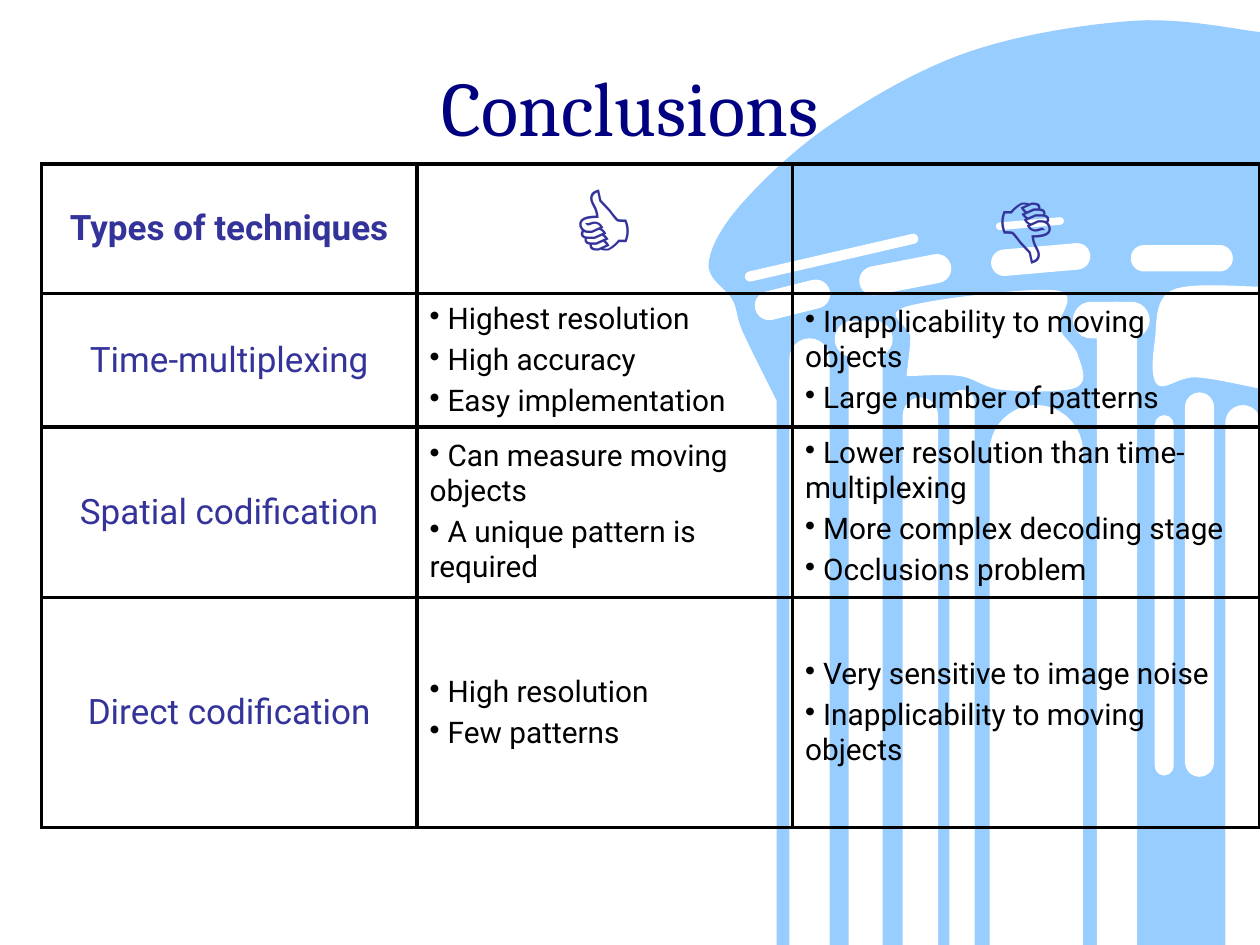
from lxml import etree
from pptx import Presentation
from pptx.dml.color import RGBColor
from pptx.enum import shapes, text
from pptx.oxml import ns
from pptx.util import Inches, Pt

HUES = {"sky": "98CDFF", "white": "FFFFFF", "navy": "000080",
        "head": "333399", "black": "000000"}
FLOOR = 7.5

# Points on the curved edges of the column top and of its two hollows.
CAP = [(10, .26), (9.01, .17), (7.71, .41), (6.63, .97), (5.9, 1.61),
       (5.63, 2.09), (5.82, 2.38), (5.9, 2.63), (6.17, 3.18)]
HOLLOWS = [
    [(7.2, 2.98), (7.62, 2.98), (7.96, 3.09), (8.54, 3.07), (8.55, 2.82),
     (8.4, 2.6), (8.38, 2.31), (7.19, 2.44), (7.23, 2.67), (7.2, 2.98)],
    [(10, 2.28), (9.3, 2.31), (9.17, 2.71), (9.19, 3.05), (9.49, 2.99), (10, 3.08)],
]
# Flutes: left, right, top, bottom.
FLUTES = [(6.27, 6.58, 2.69, FLOOR), (6.74, 7, 2.55, FLOOR), (7.17, 7.44, 3.16, FLOOR),
          (7.54, 7.73, 3.1, FLOOR), (7.86, 8.59, 3.22, FLOOR), (8.71, 9.02, 2.4, FLOOR),
          (9.17, 9.31, 3.3, 6.15), (9.41, 9.63, 3.12, 6.16), (9.73, 10, 3.22, FLOOR)]
# Pills: left, top, width, height, turn.
PILLS = [(6.63, 2.55, .45, .28, 0), (8.52, 2.4, .6, .28, 0), (7.87, 1.96, .78, .2, -5),
         (8.98, 1.95, .8, .2, 0), (5.99, 2.27, .6, .22, -14), (6.82, 2.07, .73, .22, -11),
         (7.91, 1.75, .53, .05, -5), (5.9, 2.01, 1.4, .07, -13)]

COLS = [2.98, 2.98, 3.71]
ROWS = [1.03, 1.06, 1.35, 1.83]
HEAD = {"size": Pt(20), "bold": True, "name": "Roboto"}
LABEL = {"size": Pt(20), "name": "Roboto"}
THUMB = {"size": Pt(56), "name": "Roboto"}
POINT = {"size": Pt(17), "name": "Roboto"}
CELLS = [
    ("Types of techniques", "👍", "👎"),
    ("Time-multiplexing",
     ["Highest resolution", "High accuracy", "Easy implementation"],
     ["Inapplicability to moving objects", "Large number of patterns"]),
    ("Spatial codification",
     ["Can measure moving objects", "A unique pattern is required"],
     ["Lower resolution than time-multiplexing", "More complex decoding stage",
      "Occlusions problem"]),
    ("Direct codification",
     ["High resolution", "Few patterns"],
     ["Very sensitive to image noise", "Inapplicability to moving objects"]),
]


def color(name):
    return RGBColor.from_string(HUES[name])


def smooth(pts, steps=12):
    """Return points along a Catmull-Rom curve through pts."""
    ends = [pts[0], *pts, pts[-1]]
    out = [pts[0]]
    for a, b, c, d in zip(ends, ends[1:], ends[2:], ends[3:]):
        for k in range(1, steps + 1):
            t = k / steps
            out.append([q + t / 2 * (r - p + t * (2 * p - 5 * q + 4 * r - s
                                                  + t * (3 * (q - r) + s - p)))
                        for p, q, r, s in zip(a, b, c, d)])
    return out


def paint(shape, hue):
    shape.shadow.inherit = False
    shape.fill.solid()
    shape.fill.fore_color.rgb = shape.line.color.rgb = color(hue)
    shape.line.width = Pt(0.75)


def add_blob(slide, pts, hue):
    first, *rest = [(Inches(x), Inches(y)) for x, y in pts]
    pen = slide.shapes.build_freeform(*first)
    pen.add_line_segments(rest, close=True)
    paint(pen.convert_to_shape(), hue)


def add_bar(slide, kind, box, turn=0):
    bar = slide.shapes.add_shape(kind, *map(Inches, box))
    bar.adjustments[0] = 0.5
    bar.rotation = turn
    paint(bar, "white")


def add_column(slide):
    kinds = shapes.MSO_SHAPE
    add_blob(slide, smooth(CAP) + [(CAP[-1][0], FLOOR), (10, FLOOR)], "sky")
    for left, right, top, low in FLUTES:
        kind = kinds.ROUND_2_SAME_RECTANGLE if low == FLOOR else kinds.ROUNDED_RECTANGLE
        add_bar(slide, kind, (left, top, right - left, low - top))
    for pts in HOLLOWS:
        add_blob(slide, smooth(pts), "white")
    for *box, turn in PILLS:
        add_bar(slide, kinds.ROUNDED_RECTANGLE, box, turn)


def add_text(para, words, hue, style):
    run = para.add_run()
    run.text = words
    for key, val in style.items():
        setattr(run.font, key, val)
    run.font.color.rgb = color(hue)


def add_title(slide, words):
    title = slide.shapes.title
    title.element.getparent().append(title.element)  # in front of the column
    place = {"left": 0.75, "top": 0.42, "width": 8.5, "height": 0.83}
    for key, val in place.items():
        setattr(title, key, Inches(val))
    title.text_frame.vertical_anchor = text.MSO_ANCHOR.MIDDLE
    para = title.text_frame.paragraphs[0]
    para.alignment = text.PP_ALIGN.CENTER
    add_text(para, words, "navy", {"size": Pt(44), "name": "Cambria"})


def frame(cell):
    """Clear the fill and draw all four borders."""
    cell.fill.background()
    props = cell._tc.get_or_add_tcPr()
    for i, side in enumerate(("lnL", "lnR", "lnT", "lnB")):
        line = etree.Element(ns.qn("a:" + side), w=str(Pt(2.25)))
        fill = etree.SubElement(line, ns.qn("a:solidFill"))
        etree.SubElement(fill, ns.qn("a:srgbClr"), val=HUES["black"])
        props.insert(i, line)


def fill_list(cell, items):
    for i, item in enumerate(items):
        para = cell.text_frame.add_paragraph() if i else cell.text_frame.paragraphs[0]
        props = para._p.get_or_add_pPr()
        props.set("marL", "0")
        props.set("indent", "0")
        etree.SubElement(props, ns.qn("a:buChar"), char="•")
        para.space_before = Pt(3.4 if i else 0)
        add_text(para, " " + item, "black", POINT)


def add_grid(slide):
    grid = slide.shapes.add_table(len(ROWS), len(COLS), Inches(0.33), Inches(1.3),
                                  Inches(sum(COLS)), Inches(sum(ROWS))).table
    grid.first_row = grid.horz_banding = False
    for col, wide in zip(grid.columns, COLS):
        col.width = Inches(wide)
    for r, (row, high) in enumerate(zip(grid.rows, ROWS)):
        row.height = Inches(high)
        for c, (cell, words) in enumerate(zip(row.cells, CELLS[r])):
            frame(cell)
            cell.vertical_anchor = text.MSO_ANCHOR.MIDDLE
            if isinstance(words, list):
                fill_list(cell, words)
                continue
            para = cell.text_frame.paragraphs[0]
            para.alignment = text.PP_ALIGN.CENTER
            add_text(para, words, "head", THUMB if c else LABEL if r else HEAD)


def main():
    deck = Presentation()
    deck.slide_width, deck.slide_height = Inches(10), Inches(FLOOR)
    slide = deck.slides.add_slide(deck.slide_layouts[5])
    add_column(slide)
    add_title(slide, "Conclusions")
    add_grid(slide)
    deck.save("out.pptx")


if __name__ == "__main__":
    main()
